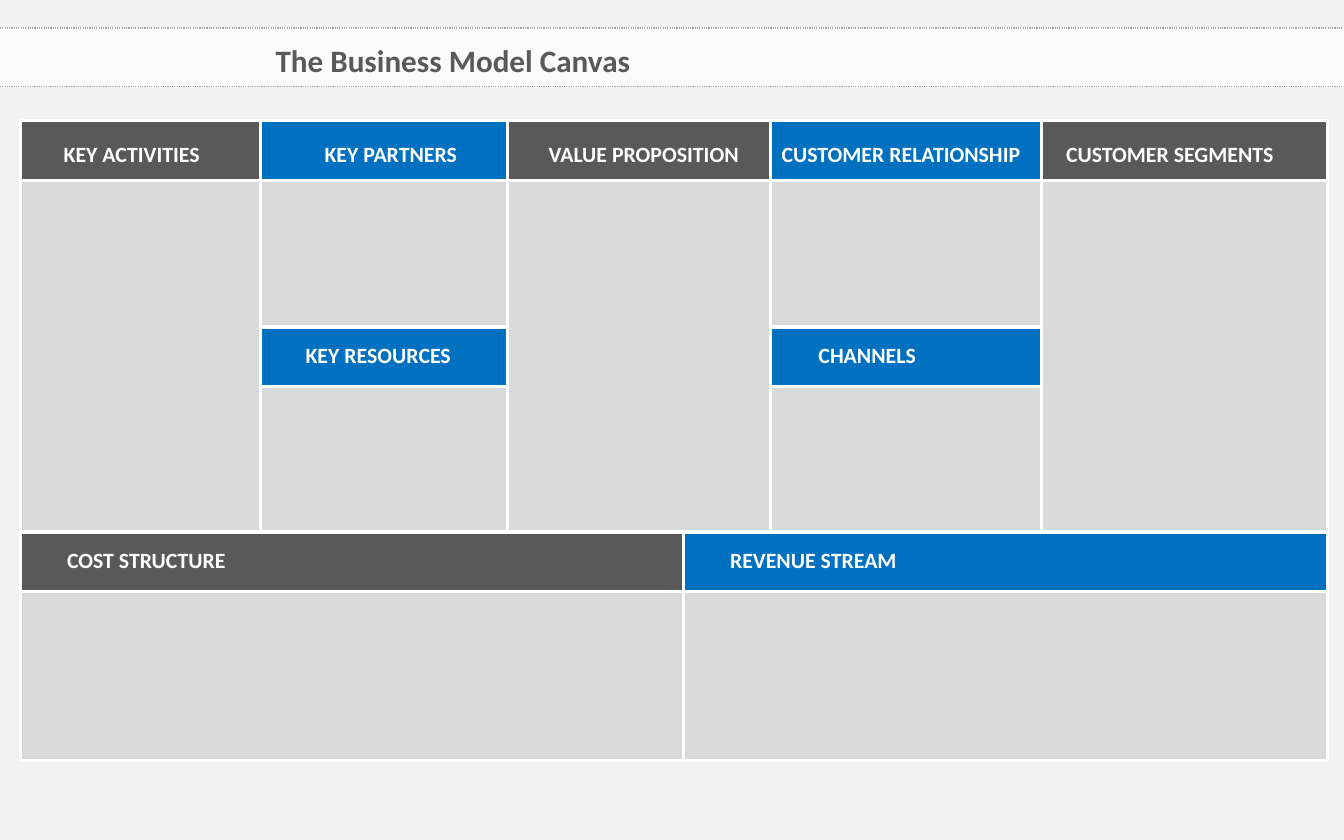
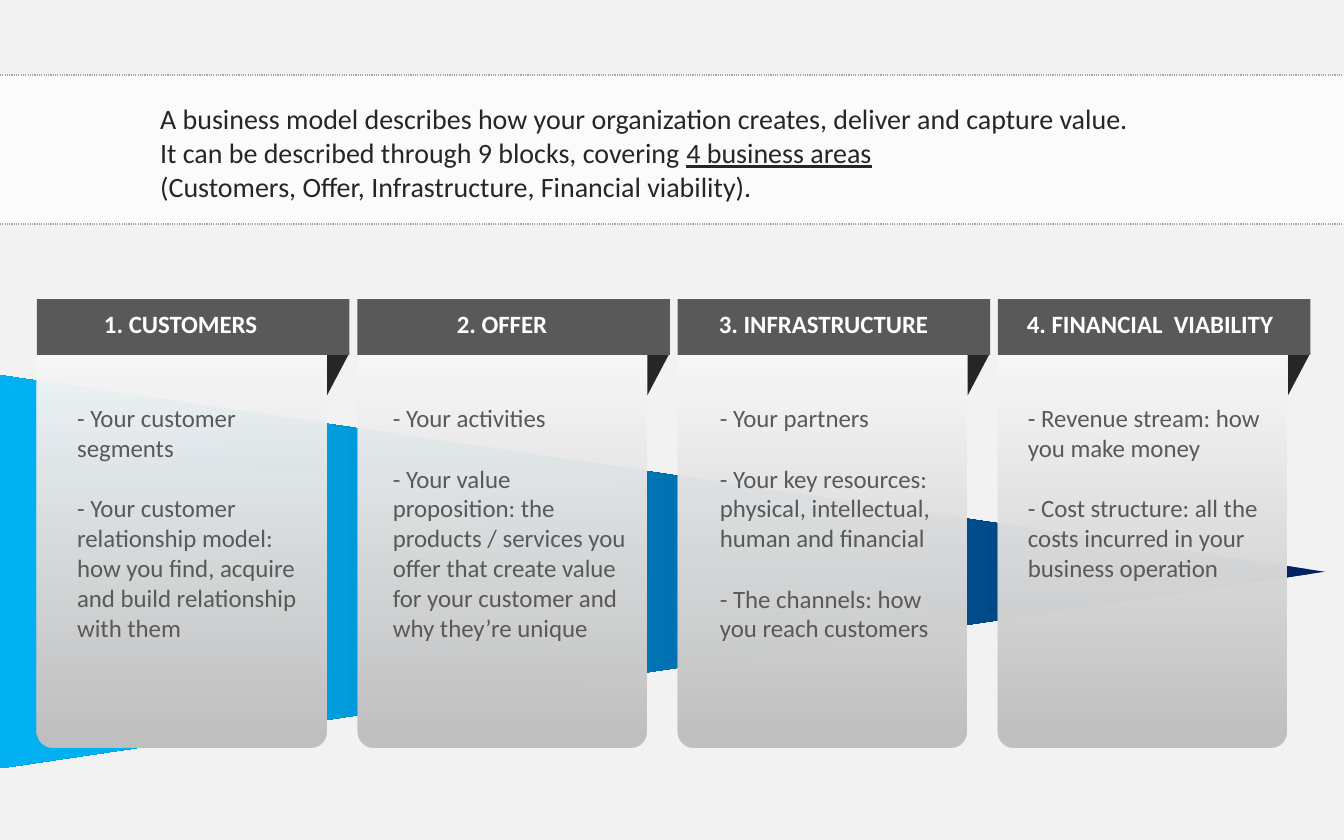
from dataclasses import dataclass

from lxml import etree
from pptx import Presentation
from pptx.dml.color import RGBColor
from pptx.enum.dml import MSO_LINE
from pptx.enum.shapes import MSO_CONNECTOR, MSO_SHAPE
from pptx.enum.text import MSO_ANCHOR, MSO_AUTO_SIZE, PP_ALIGN
from pptx.oxml.ns import qn
from pptx.util import Inches, Pt

RECT = MSO_SHAPE.RECTANGLE
ROUND = MSO_SHAPE.ROUNDED_RECTANGLE
EXTRACT = MSO_SHAPE.FLOWCHART_EXTRACT
TRIANGLE = MSO_SHAPE.RIGHT_TRIANGLE
STRAIGHT = MSO_CONNECTOR.STRAIGHT
DOTTED = MSO_LINE.ROUND_DOT
GROW = MSO_AUTO_SIZE.SHAPE_TO_FIT_TEXT
TOP = MSO_ANCHOR.TOP
LEFT = PP_ALIGN.LEFT

FONT = "Calibri"
PAGE, BAND, WHITE = "F2F2F2", "FBFBFB", "FFFFFF"
DARK, BLACK, BLUE = "595959", "262626", "0070C0"
PANEL, RULE, SILVER = "D9D9D9", "A6A6A6", "BFBFBF"
NAVY, SKY = "002060", "00B0F0"
SLIDE_W, SLIDE_H = 12, 7.5

# Canvas grid: column and row edges
COLS = (0.18, 2.33, 4.53, 6.88, 9.3, 11.85)
ROWS = (1.08, 2.92, 4.75, 6.79)
SPLIT = 6.1
HEAD_H = 0.53

# Card grid
CARD_X, CARD_PITCH, CARD_W = 0.33, 2.86, 2.58
CARD_HEAD_Y, CARD_HEAD_W, CARD_HEAD_H = 2.67, 2.79, 0.5


@dataclass
class Block:
    label: str
    left: float
    right: float
    top: float
    bottom: float
    color: str
    indent: float
    drop: float
    label_w: float


@dataclass
class Card:
    heading: str
    heading_indent: float
    heading_w: float
    items: tuple[str, ...]
    indent: float
    text_w: float


BLOCKS = (
    Block("KEY ACTIVITIES", COLS[0], COLS[1], ROWS[0], ROWS[2], DARK, 0.29, 0.13, 1.86),
    Block("KEY PARTNERS", COLS[1], COLS[2], ROWS[0], ROWS[1], BLUE, 0.47, 0.13, 1.73),
    Block("KEY RESOURCES", COLS[1], COLS[2], ROWS[1], ROWS[2], BLUE, 0.3, 0.08, 1.55),
    Block("VALUE PROPOSITION", COLS[2], COLS[3], ROWS[0], ROWS[2], DARK, 0.27, 0.13, 2.17),
    Block("CUSTOMER RELATIONSHIP", COLS[3], COLS[4], ROWS[0], ROWS[1], BLUE, 0, 0.13, 2.42),
    Block("CHANNELS", COLS[3], COLS[4], ROWS[1], ROWS[2], BLUE, 0.33, 0.08, 1.1),
    Block("CUSTOMER SEGMENTS", COLS[4], COLS[5], ROWS[0], ROWS[2], DARK, 0.12, 0.13, 2.16),
    Block("COST STRUCTURE", COLS[0], SPLIT, ROWS[2], ROWS[3], DARK, 0.32, 0.08, 1.65),
    Block("REVENUE STREAM", SPLIT, COLS[5], ROWS[2], ROWS[3], BLUE, 0.32, 0.08, 1.75),
)

CARDS = (
    Card("1. CUSTOMERS", 0.5, 1.59,
         ("- Your customer segments",
          "- Your customer relationship model: how you find, acquire "
          "and build relationship with them"), 0.26, 2.16),
    Card("2. OFFER", 0.79, 1.02,
         ("- Your activities",
          "- Your value proposition: the products / services you offer that "
          "create value for your customer and why they’re unique"), 0.22, 2.37),
    Card("3. INFRASTRUCTURE", 0.27, 2.1,
         ("- Your partners",
          "- Your key resources: physical, intellectual, human and financial",
          "- The channels: how you reach customers"), 0.28, 2.26),
    Card("4. FINANCIAL  VIABILITY", 0.16, 2.43,
         ("- Revenue stream: how you make money",
          "- Cost structure: all the costs incurred in your business operation"),
         0.17, 2.33),
)


def rgb(color: str) -> RGBColor:
    return RGBColor.from_string(color)


def add_shape(slide, kind, x: float, y: float, w: float, h: float,
              fill: str = "", line: str = "", rotation: float = 0):
    sp = slide.shapes.add_shape(kind, Inches(x), Inches(y), Inches(w), Inches(h))
    sp.shadow.inherit = False
    sp.rotation = rotation
    if fill:
        sp.fill.solid()
        sp.fill.fore_color.rgb = rgb(fill)
    if line:
        sp.line.color.rgb = rgb(line)
        sp.line.width = Pt(2)
    else:
        sp.line.fill.background()
    return sp


def set_gradient(sp, start: str, end: str, end_at: float, opacity: int = 100) -> None:
    """Fill from top to bottom; opacity applies to the start colour."""
    sp.fill.gradient()
    sp.fill.gradient_angle = 270
    for stop, color, place in zip(sp.fill.gradient_stops, (start, end), (0, end_at)):
        stop.color.rgb = rgb(color)
        stop.position = place
    if opacity < 100:
        first = next(sp._element.spPr.iter(qn("a:srgbClr")))
        etree.SubElement(first, qn("a:alpha"), val=str(opacity * 1000))


def format_text(tf, size: float, color: str, bold: bool = False, gap: float = 0) -> None:
    tf.vertical_anchor = TOP
    tf.auto_size = GROW
    for p in tf.paragraphs:
        p.alignment = LEFT
        p.space_before = Pt(gap if p is not tf.paragraphs[0] else 0)
        for r in p.runs:
            r.font.name = FONT
            r.font.size = Pt(size)
            r.font.bold = bold
            r.font.color.rgb = rgb(color)
    tf.paragraphs[0].space_before = Pt(0)


def add_text(slide, text: str, x: float, y: float, w: float, h: float,
             size: float, color: str, bold: bool = False, gap: float = 0,
             wrap: bool = True) -> None:
    tf = slide.shapes.add_textbox(Inches(x), Inches(y), Inches(w), Inches(h)).text_frame
    tf.word_wrap = wrap
    tf.text = text
    format_text(tf, size, color, bold, gap)


def add_band(slide, top: float, height: float) -> None:
    add_shape(slide, RECT, 0, top, SLIDE_W, height, BAND)
    for y in (top, top + height):
        line = slide.shapes.add_connector(
            STRAIGHT, 0, Inches(y), Inches(SLIDE_W), Inches(y))
        line.line.color.rgb = rgb(RULE)
        line.line.width = Pt(0.75)
        line.line.dash_style = DOTTED
        etree.SubElement(line._element.spPr, qn("a:effectLst"))


def place_title(slide, text: str, x: float, y: float, w: float, h: float):
    """Fill the title placeholder and bring it in front of the band."""
    title = slide.shapes.title
    title.left, title.top, title.width, title.height = map(Inches, (x, y, w, h))
    title.text_frame.text = text
    slide.shapes._spTree.append(title._element)
    return title.text_frame


def build_canvas(slide) -> None:
    add_band(slide, 0.25, 0.52)
    tf = place_title(slide, "The Business Model Canvas", 2.36, 0.32, 6.98, 0.44)
    format_text(tf, 20, DARK, bold=True)

    # Panels first, then their headers and labels
    for b in BLOCKS:
        add_shape(slide, RECT, b.left, b.top, b.right - b.left, b.bottom - b.top,
                  PANEL, WHITE)
    for b in BLOCKS:
        add_shape(slide, RECT, b.left, b.top, b.right - b.left, HEAD_H, b.color, WHITE)
    for b in BLOCKS:
        add_text(slide, b.label, b.left + b.indent, b.top + b.drop, b.label_w, 0.34,
                 14, WHITE, bold=True)


def add_card(slide, card: Card, x: float) -> None:
    body = add_shape(slide, ROUND, x, 2.76, CARD_W, 3.91)
    body.adjustments[0] = 0.057
    set_gradient(body, WHITE, SILVER, 0.97, opacity=94)
    add_shape(slide, TRIANGLE, x + 2.5, 3.24, 0.38, 0.2, BLACK, rotation=90)
    add_shape(slide, RECT, x, CARD_HEAD_Y, CARD_HEAD_W, CARD_HEAD_H, DARK)
    add_text(slide, card.heading, x + card.heading_indent, 2.71, card.heading_w, 0.37,
             16, WHITE, bold=True, wrap=False)
    add_text(slide, "\n".join(card.items), x + card.indent, 3.55, card.text_w, 2.26,
             16, DARK, gap=19.5)


def build_areas(slide) -> None:
    add_band(slide, 0.67, 1.33)
    tf = place_title(
        slide,
        "A business model describes how your organization creates, deliver and capture value.\n"
        "It can be described through 9 blocks, covering \n"
        "(Customers, Offer, Infrastructure, Financial viability).",
        1.33, 0.86, 10.08, 1.14)
    r = tf.paragraphs[1].add_run()
    r.text = "4 business areas"
    r.font.underline = True
    format_text(tf, 18, BLACK)

    # Funnel behind the cards
    funnel = add_shape(slide, EXTRACT, 4.16, -0.81, 3.51, 11.83, rotation=90)
    set_gradient(funnel, NAVY, SKY, 0.87)
    for i, card in enumerate(CARDS):
        add_card(slide, card, CARD_X + i * CARD_PITCH)


def main() -> None:
    prs = Presentation()
    prs.slide_width, prs.slide_height = Inches(SLIDE_W), Inches(SLIDE_H)
    background = prs.slide_master.background.fill
    background.solid()
    background.fore_color.rgb = rgb(PAGE)
    title_only = prs.slide_layouts[5]
    for build in (build_canvas, build_areas):
        build(prs.slides.add_slide(title_only))
    prs.save("out.pptx")


if __name__ == "__main__":
    main()
